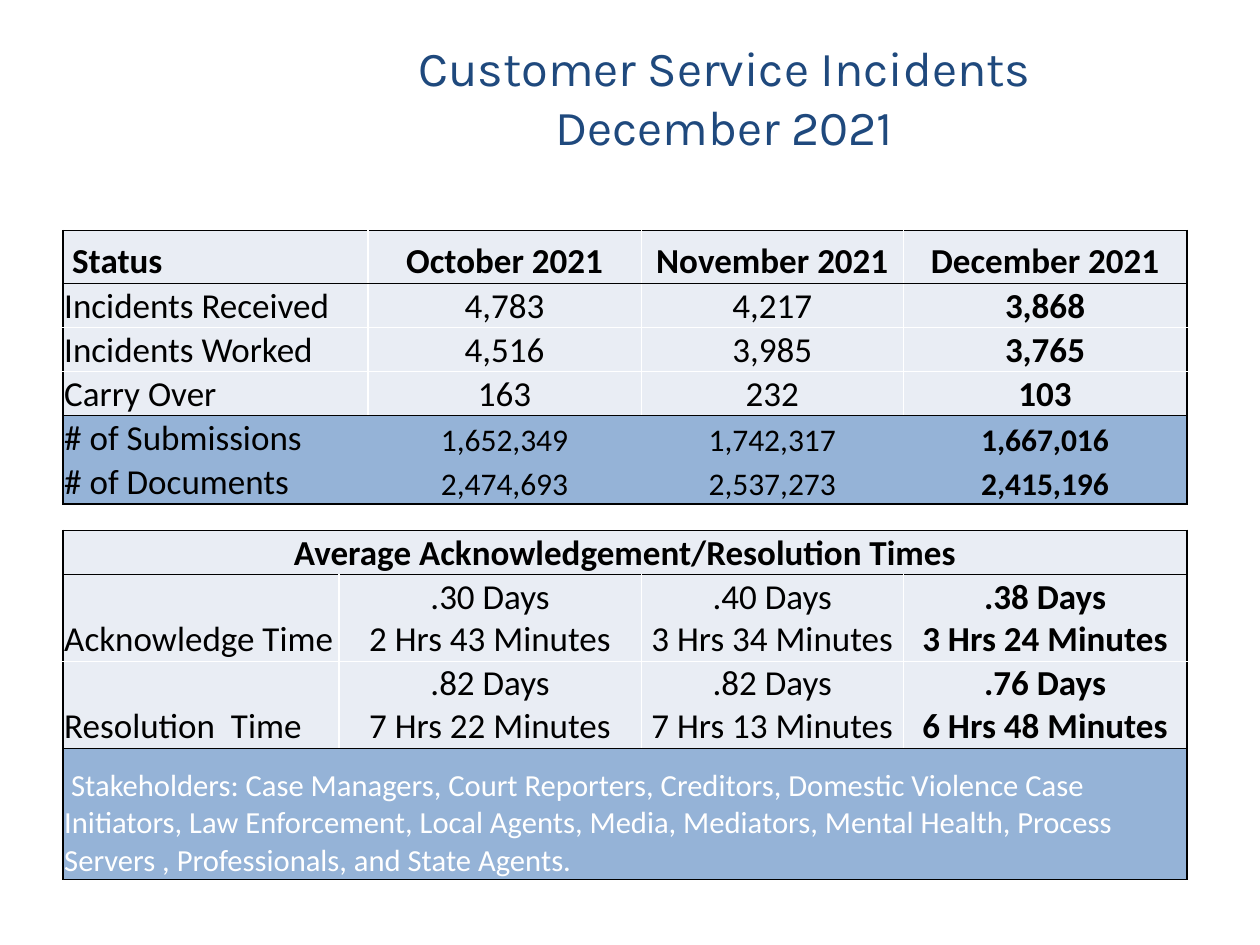
from dataclasses import dataclass

from lxml import etree
from pptx import Presentation
from pptx.dml.color import RGBColor
from pptx.enum.text import MSO_ANCHOR, PP_ALIGN
from pptx.oxml.ns import qn
from pptx.util import Inches, Pt

LEFT, CENTER = PP_ALIGN.LEFT, PP_ALIGN.CENTER
MIDDLE, BOTTOM = MSO_ANCHOR.MIDDLE, MSO_ANCHOR.BOTTOM
BLACK, WHITE, NAVY = "000000", "FFFFFF", "1F497D"
PALE, BLUE = "E9EDF4", "95B3D7"

# Column groups, as first and last column of each cell in a row
STATUS_SPANS = ((0, 1), (2, 2), (3, 3), (4, 4))
TIME_SPANS = ((0, 0), (1, 2), (3, 3), (4, 4))
FULL_SPAN = ((0, 4),)
COLUMN_WIDTHS = (2.19, 0.23, 2.17, 2.08, 2.25)


@dataclass
class Row:
    height: float
    texts: tuple[str, ...]
    spans: tuple[tuple[int, int], ...] = STATUS_SPANS
    fill: str | None = PALE
    top: str | None = WHITE
    bottom: str | None = WHITE
    inner: str | None = WHITE
    outer: str | None = BLACK
    label_size: float = 20
    value_size: float = 20
    color: str = BLACK
    bold: bool = False


ROWS = (
    Row(0.42, (" Status", "October 2021", "November 2021", "December 2021"),
        top=BLACK, bottom=BLACK, bold=True),
    Row(0.35, ("Incidents Received", "4,783", "4,217", "3,868"), top=BLACK),
    Row(0.35, ("Incidents Worked", "4,516", "3,985", "3,765")),
    Row(0.35, ("Carry Over", "163", "232", "103"), bottom=BLACK),
    Row(0.35, ("# of Submissions", "1,652,349", "1,742,317", "1,667,016"),
        fill=BLUE, top=BLACK, bottom=None, inner=None, value_size=18),
    Row(0.35, ("# of Documents", "2,474,693", "2,537,273", "2,415,196"),
        fill=BLUE, top=None, bottom=BLACK, inner=None, value_size=18),
    Row(0.21, ("",), FULL_SPAN, fill=None, top=BLACK, bottom=BLACK, outer=None),
    Row(0.35, ("Average Acknowledgement/Resolution Times",), FULL_SPAN,
        top=BLACK, bottom=BLACK, bold=True),
    Row(0.69, ("Acknowledge Time", ".30 Days\n2 Hrs 43 Minutes",
               ".40 Days\n3 Hrs 34 Minutes", ".38 Days\n3 Hrs 24 Minutes"),
        TIME_SPANS, top=BLACK),
    Row(0.69, ("Resolution  Time", ".82 Days\n7 Hrs 22 Minutes",
               ".82 Days\n7 Hrs 13 Minutes", ".76 Days\n6 Hrs 48 Minutes"),
        TIME_SPANS, bottom=BLACK),
    Row(1.04, (" Stakeholders: Case Managers, Court Reporters, Creditors, "
               "Domestic Violence Case Initiators, Law Enforcement, Local Agents, "
               "Media, Mediators, Mental Health, Process Servers , Professionals, "
               "and State Agents.",),
        FULL_SPAN, fill=BLUE, top=BLACK, bottom=BLACK, label_size=17.5, color=WHITE),
)


def rgb(value: str) -> RGBColor:
    return RGBColor.from_string(value)


def write(frame, text: str, *, size: float, color: str, font: str = "Calibri",
          bold: bool = False, align=LEFT) -> None:
    """Write one paragraph for each line of the text."""
    for index, line in enumerate(text.split("\n")):
        para = frame.add_paragraph() if index else frame.paragraphs[0]
        para.alignment = align
        span = para.add_run()
        span.text = line
        span.font.size = Pt(size)
        span.font.name = font
        span.font.bold = bold
        span.font.color.rgb = rgb(color)


def set_borders(cell, **sides: str | None) -> None:
    """Draw the L, R, T and B edges; None hides an edge."""
    properties = cell._tc.get_or_add_tcPr()
    for side, color in sides.items():
        line = etree.SubElement(properties, qn(f"a:ln{side}"), w=str(Pt(1)))
        if color is None:
            etree.SubElement(line, qn("a:noFill"))
        else:
            solid = etree.SubElement(line, qn("a:solidFill"))
            etree.SubElement(solid, qn("a:srgbClr"), val=color)


def style_cell(cell, row: Row, first: int, last: int) -> None:
    set_borders(cell,
                L=row.outer if first == 0 else row.inner,
                R=row.outer if last == len(COLUMN_WIDTHS) - 1 else row.inner,
                T=row.top, B=row.bottom)
    if row.fill:
        cell.fill.solid()
        cell.fill.fore_color.rgb = rgb(row.fill)
    else:
        cell.fill.background()
    cell.margin_left = cell.margin_right = cell.margin_top = Inches(0.01)
    cell.margin_bottom = 0
    cell.vertical_anchor = BOTTOM
    # A small end mark keeps empty cells from stretching their row
    etree.SubElement(cell.text_frame.paragraphs[0]._p, qn("a:endParaRPr"), sz="1000")


def fill_row(table, number: int, row: Row) -> None:
    table.rows[number].height = Inches(row.height)
    for (first, last), text in zip(row.spans, row.texts):
        for column in range(first, last + 1):
            style_cell(table.cell(number, column), row, first, last)
        cell = table.cell(number, first)
        if last > first:
            cell.merge(table.cell(number, last))
        if text:
            label = first == 0
            heading = label and row.spans == FULL_SPAN and row.bold
            write(cell.text_frame, text, color=row.color,
                  size=row.label_size if label else row.value_size,
                  bold=row.bold or (not label and last == 4),
                  align=CENTER if heading or not label else LEFT)


def add_title(page) -> None:
    box = page.shapes.add_textbox(Inches(2), Inches(0.33), Inches(7.5), Inches(1.22))
    frame = box.text_frame
    frame.word_wrap = True
    frame.vertical_anchor = MIDDLE
    frame.margin_left = frame.margin_right = frame.margin_top = Inches(0.02)
    frame.margin_bottom = Inches(0.37)
    write(frame, "Customer Service Incidents\nDecember 2021",
          size=27.9, color=NAVY, font="Karla", align=CENTER)


def add_incident_table(page) -> None:
    height = sum(row.height for row in ROWS)
    table = page.shapes.add_table(len(ROWS), len(COLUMN_WIDTHS), Inches(0.5), Inches(1.83),
                                  Inches(sum(COLUMN_WIDTHS)), Inches(height)).table
    table.first_row = table.horz_banding = False
    for column, width in zip(table.columns, COLUMN_WIDTHS):
        column.width = Inches(width)
    for number, row in enumerate(ROWS):
        fill_row(table, number, row)


def main() -> None:
    deck = Presentation()
    deck.slide_width, deck.slide_height = Inches(10), Inches(7.5)
    page = deck.slides.add_slide(deck.slide_layouts[6])
    add_title(page)
    add_incident_table(page)
    deck.save("out.pptx")


if __name__ == "__main__":
    main()
